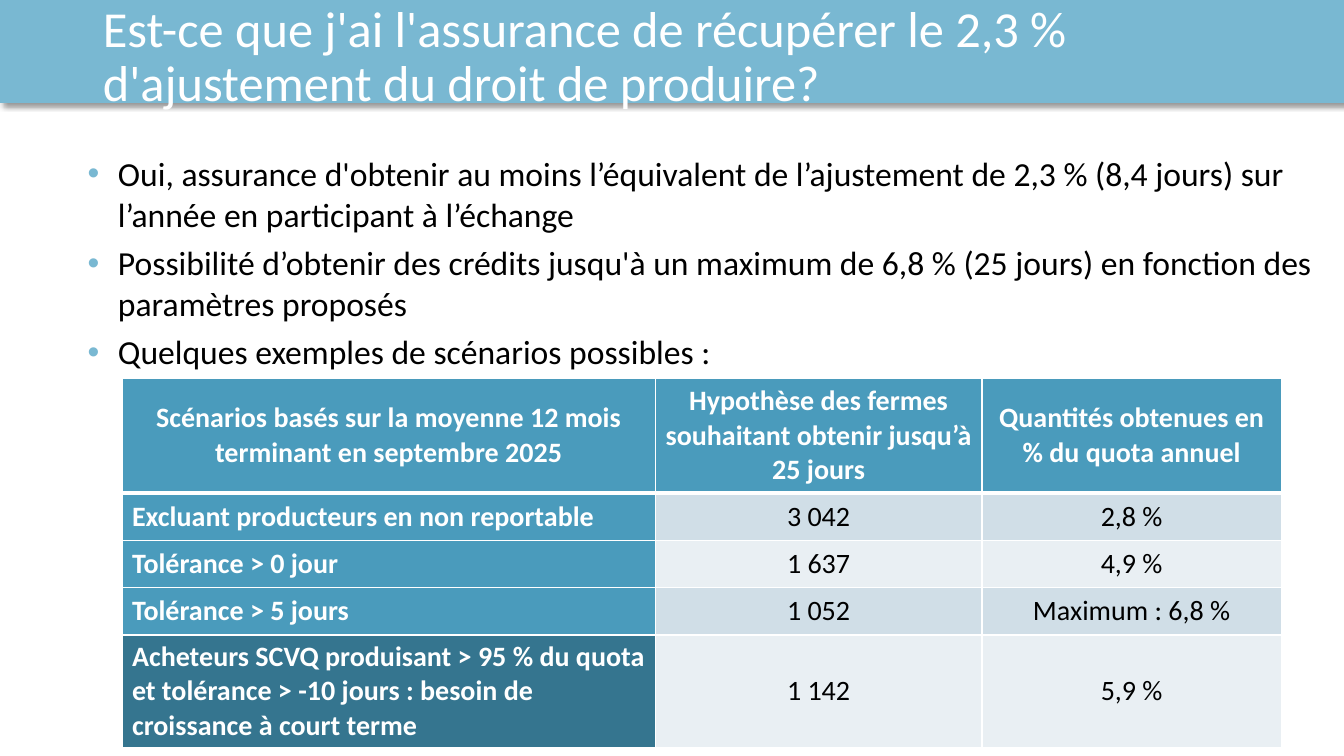
"""Build the slide on recovering the 2,3 % adjustment of the right to produce."""
from typing import NamedTuple

from lxml import etree
from pptx import Presentation
from pptx.dml.color import RGBColor
from pptx.enum.shapes import MSO_SHAPE
from pptx.enum.text import MSO_ANCHOR, MSO_AUTO_SIZE, PP_ALIGN
from pptx.oxml.ns import qn
from pptx.util import Pt

EMU_PER_PX = 9144
FONT = "Calibri"
RECTANGLE = MSO_SHAPE.RECTANGLE
MIDDLE, TOP = MSO_ANCHOR.MIDDLE, MSO_ANCHOR.TOP
LEFT, CENTER = PP_ALIGN.LEFT, PP_ALIGN.CENTER
NO_AUTOFIT = MSO_AUTO_SIZE.NONE

WHITE = RGBColor(0xFF, 0xFF, 0xFF)
BLACK = RGBColor(0x00, 0x00, 0x00)
SKY = RGBColor(0x79, 0xB8, 0xD2)
BLUE = RGBColor(0x4A, 0x9B, 0xBC)
DEEP_BLUE = RGBColor(0x35, 0x75, 0x8F)
BAND_DARK = RGBColor(0xD0, 0xDE, 0xE7)
BAND_LIGHT = RGBColor(0xE9, 0xEF, 0xF3)


class Box(NamedTuple):
    left: int
    top: int
    width: int
    height: int


class Scenario(NamedTuple):
    label: str
    farms: str
    quantity: str
    height: int
    label_fill: RGBColor = BLUE


TITLE = "Est-ce que j'ai l'assurance de récupérer le 2,3 % d'ajustement du droit de produire?"
BULLETS = [
    "Oui, assurance d'obtenir au moins l’équivalent de l’ajustement de 2,3 % (8,4 jours) sur l’année en participant à l’échange",
    "Possibilité d’obtenir des crédits jusqu'à un maximum de 6,8 % (25 jours) en fonction des paramètres proposés",
    "Quelques exemples de scénarios possibles :",
]
HEADER = Scenario(
    "Scénarios basés sur la moyenne 12 mois terminant en septembre 2025",
    "Hypothèse des fermes souhaitant obtenir jusqu’à 25 jours",
    "Quantités obtenues en % du quota annuel",
    114,
)
SCENARIOS = [
    Scenario("Excluant producteurs en non reportable", "3 042", "2,8 %", 47),
    Scenario("Tolérance > 0 jour", "1 637", "4,9 %", 47),
    Scenario("Tolérance > 5 jours", "1 052", "Maximum : 6,8 %", 47),
    Scenario(
        "Acheteurs SCVQ produisant > 95 % du quota et tolérance > -10 jours : besoin de croissance à court terme",
        "1 142", "5,9 %", 80, DEEP_BLUE,
    ),
]
COLUMN_WIDTHS = [529, 324, 297]
BAND_BOX = Box(0, 0, 1333, 102)
TITLE_BOX = Box(92, 23, 1042, 69)
BODY_BOX = Box(48, 147, 1263, 550)
TABLE_BOX = Box(121, 375, sum(COLUMN_WIDTHS), 335)


def px(length: int) -> int:
    return length * EMU_PER_PX


def place(shape, box: Box) -> None:
    shape.left, shape.top, shape.width, shape.height = map(px, box)


def format_font(paragraph, size: int, color: RGBColor, bold: bool = False) -> None:
    for run in paragraph.runs:
        run.font.name = FONT
        run.font.size = Pt(size)
        run.font.bold = bold
        run.font.color.rgb = color


def add_color(parent, color: RGBColor):
    return etree.SubElement(parent, qn("a:srgbClr"), val=str(color))


def add_band(slide) -> None:
    band = slide.shapes.add_shape(RECTANGLE, *map(px, BAND_BOX))
    band.fill.solid()
    band.fill.fore_color.rgb = SKY
    band.line.color.rgb = SKY
    band.line.width = Pt(1)
    band.shadow.inherit = False
    effects = band.element.spPr.find(qn("a:effectLst"))
    shadow = etree.SubElement(
        effects, qn("a:outerShdw"), blurRad=str(Pt(4)), dist=str(Pt(3)),
        dir="2700000", algn="tl", rotWithShape="0",
    )
    etree.SubElement(add_color(shadow, BLACK), qn("a:alpha"), val="40000")
    slide.shapes.title.element.addprevious(band.element)


def fill_title(title) -> None:
    place(title, TITLE_BOX)
    frame = title.text_frame
    frame.text = TITLE
    frame.auto_size = NO_AUTOFIT
    frame.vertical_anchor = MIDDLE
    paragraph = frame.paragraphs[0]
    paragraph.alignment = LEFT
    paragraph.line_spacing = 0.9
    format_font(paragraph, 36, WHITE)


def add_bullet(paragraph) -> None:
    properties = paragraph._p.get_or_add_pPr()
    properties.set("marL", str(px(59)))
    properties.set("indent", str(px(-30)))
    add_color(etree.SubElement(properties, qn("a:buClr")), SKY)
    etree.SubElement(properties, qn("a:buFont"), typeface="Arial")
    etree.SubElement(properties, qn("a:buChar"), char="•")


def fill_body(body) -> None:
    place(body, BODY_BOX)
    frame = body.text_frame
    frame.text = "\n".join(BULLETS)
    frame.auto_size = NO_AUTOFIT
    frame.vertical_anchor = TOP
    for paragraph in frame.paragraphs:
        add_bullet(paragraph)
        paragraph.level = 1
        paragraph.space_before = Pt(0)
        paragraph.space_after = Pt(6)
        format_font(paragraph, 24, BLACK)


def set_borders(cell, row_index: int) -> None:
    widths = {
        "a:lnL": 1,
        "a:lnR": 1,
        "a:lnT": 3 if row_index == 1 else 1,
        "a:lnB": 3 if row_index == 0 else 1,
    }
    properties = cell._tc.get_or_add_tcPr()
    for position, (tag, width) in enumerate(widths.items()):
        line = etree.Element(qn(tag), w=str(Pt(width)))
        add_color(etree.SubElement(line, qn("a:solidFill")), WHITE)
        properties.insert(position, line)


def add_scenario_table(slide) -> None:
    rows = [HEADER, *SCENARIOS]
    frame = slide.shapes.add_table(len(rows), len(COLUMN_WIDTHS), *map(px, TABLE_BOX))
    table = frame.table
    for column, width in zip(table.columns, COLUMN_WIDTHS):
        column.width = px(width)
    for row_index, scenario in enumerate(rows):
        table.rows[row_index].height = px(scenario.height)
        band_fill = BAND_DARK if row_index % 2 else BAND_LIGHT
        texts = (scenario.label, scenario.farms, scenario.quantity)
        for column_index, text in enumerate(texts):
            is_header = row_index == 0
            is_label = column_index == 0
            is_strong = is_header or is_label
            cell = table.cell(row_index, column_index)
            cell.text_frame.text = text
            cell.vertical_anchor = MIDDLE
            cell.fill.solid()
            cell.fill.fore_color.rgb = scenario.label_fill if is_strong else band_fill
            set_borders(cell, row_index)
            paragraph = cell.text_frame.paragraphs[0]
            paragraph.alignment = LEFT if is_label and not is_header else CENTER
            format_font(paragraph, 20, WHITE if is_strong else BLACK, is_strong)


def main() -> None:
    presentation = Presentation()
    presentation.slide_width, presentation.slide_height = px(1333), px(750)
    slide = presentation.slides.add_slide(presentation.slide_layouts[1])
    add_band(slide)
    fill_title(slide.shapes.title)
    fill_body(slide.placeholders[1])
    add_scenario_table(slide)
    presentation.save("out.pptx")


if __name__ == "__main__":
    main()
